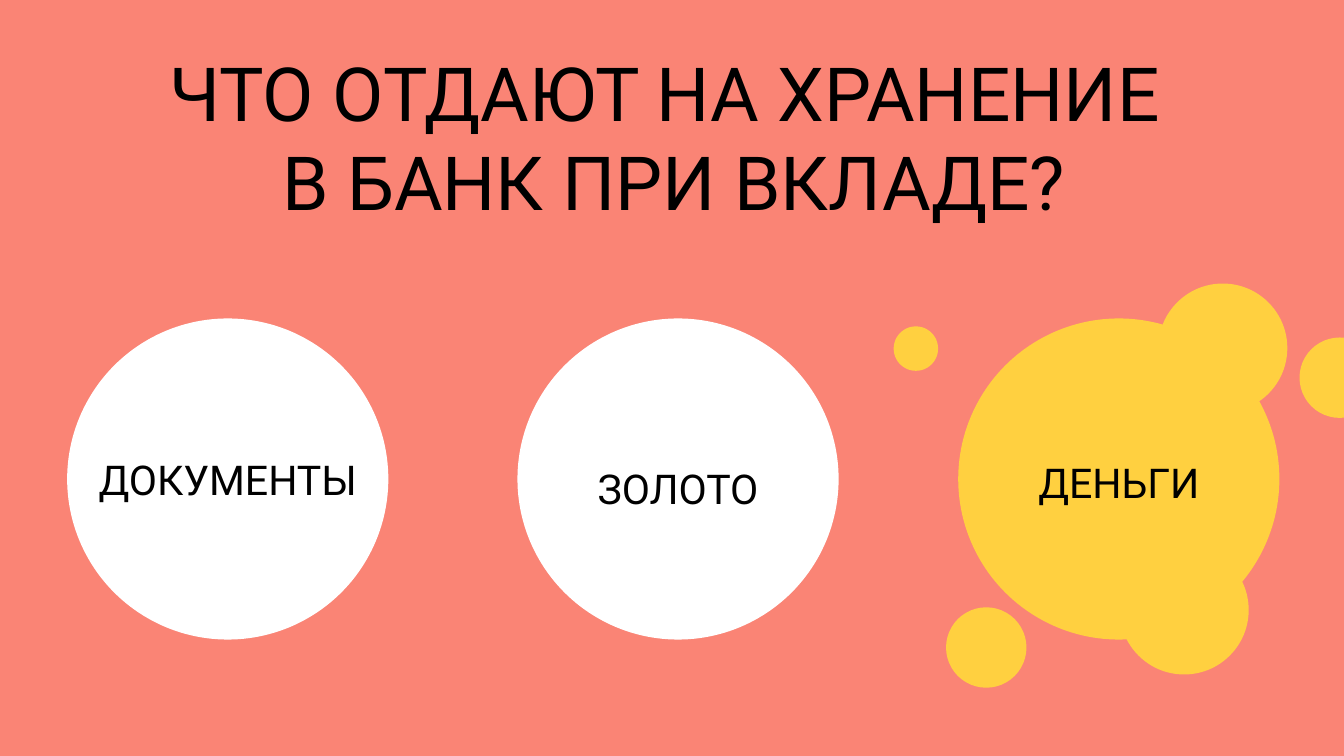
import pptx
import pptx.dml.color
import pptx.enum.shapes
import pptx.enum.text
import pptx.util
from pptx.util import Cm

COLOURS = {"coral": "FA8475", "white": "FFFFFF", "yellow": "FFD040", "text": "000000"}
SLIDE_WIDTH, SLIDE_HEIGHT = 25.4, 14.29
CIRCLE_TOP, CIRCLE_SIZE = 6.02, 6.07
LABEL_MARGIN, LABEL_HEIGHT = 0.08, 4.22
SHAPES = pptx.enum.shapes.MSO_SHAPE


def colour(name):
    """Return the named colour of the palette."""
    return pptx.dml.color.RGBColor.from_string(COLOURS[name])


def add_filled(shapes, kind, box, fill):
    """Add a preset shape with a plain fill and no outline."""
    shape = shapes.add_shape(kind, *map(Cm, box))
    shape.shadow.inherit = False
    shape.fill.solid()
    shape.fill.fore_color.rgb = colour(fill)
    shape.line.fill.background()


def add_text(page, text, box, size, font="Roboto", fill="text"):
    """Add a text box centred both ways in the given box."""
    frame = page.shapes.add_textbox(*map(Cm, box)).text_frame
    frame.word_wrap = True
    frame.vertical_anchor = pptx.enum.text.MSO_ANCHOR.MIDDLE
    frame.margin_left = frame.margin_right = Cm(0.25)
    frame.margin_top = frame.margin_bottom = Cm(0.25)
    para = frame.paragraphs[0]
    para.alignment = pptx.enum.text.PP_ALIGN.CENTER
    for index, line in enumerate(text.split("\n")):
        if index:
            para.add_line_break()
        span = para.add_run()
        span.text = line
        span.font.name = font
        span.font.size = pptx.util.Pt(size)
        span.font.color.rgb = colour(fill)


def add_label(page, text, box, drop):
    """Add an answer label inside a circle's box, lowered by drop."""
    left, top, width, height = box
    label_top = top + (height - LABEL_HEIGHT) / 2 + drop
    add_text(page, text, (left + LABEL_MARGIN, label_top,
                          width - 2 * LABEL_MARGIN, LABEL_HEIGHT), size=22)


def add_answer(page, text, box, drop):
    """Add a white circle with its answer."""
    add_filled(page.shapes, SHAPES.OVAL, box, "white")
    add_label(page, text, box, drop)


def add_splash_answer(page, text, box, drop):
    """Add the highlighted answer on a group of yellow drops."""
    left, top, size, _ = box
    drops = [(0, 0, size), (3.78, -0.66, 2.44), (3.05, 4.29, 2.44),
             (-0.23, 5.46, 1.52), (6.45, 0.36, 1.52), (-1.22, 0.15, 0.84)]
    group = page.shapes.add_group_shape()
    for across, down, diameter in drops:
        add_filled(group.shapes, SHAPES.OVAL,
                   (left + across, top + down, diameter, diameter), "yellow")
    add_label(page, text, box, drop)


def main():
    """Build the quiz slide and save it."""
    deck = pptx.Presentation()
    deck.slide_width, deck.slide_height = Cm(SLIDE_WIDTH), Cm(SLIDE_HEIGHT)
    page = deck.slides.add_slide(deck.slide_layouts[6])
    add_filled(page.shapes, SHAPES.RECTANGLE, (0, 0, SLIDE_WIDTH, SLIDE_HEIGHT), "coral")
    add_text(page, "ЧТО ОТДАЮТ НА ХРАНЕНИЕ \nВ БАНК ПРИ ВКЛАДЕ?",
             (-0.84, 0.3, 27.15, 4.55), size=40)
    answers = [(add_answer, "ДОКУМЕНТЫ", 1.27, 0),
               (add_answer, "ЗОЛОТО", 9.78, 0.17),
               (add_splash_answer, "ДЕНЬГИ", 18.11, 0.05)]
    for add_part, text, left, drop in answers:
        add_part(page, text, (left, CIRCLE_TOP, CIRCLE_SIZE, CIRCLE_SIZE), drop)
    deck.save("out.pptx")


if __name__ == "__main__":
    main()
